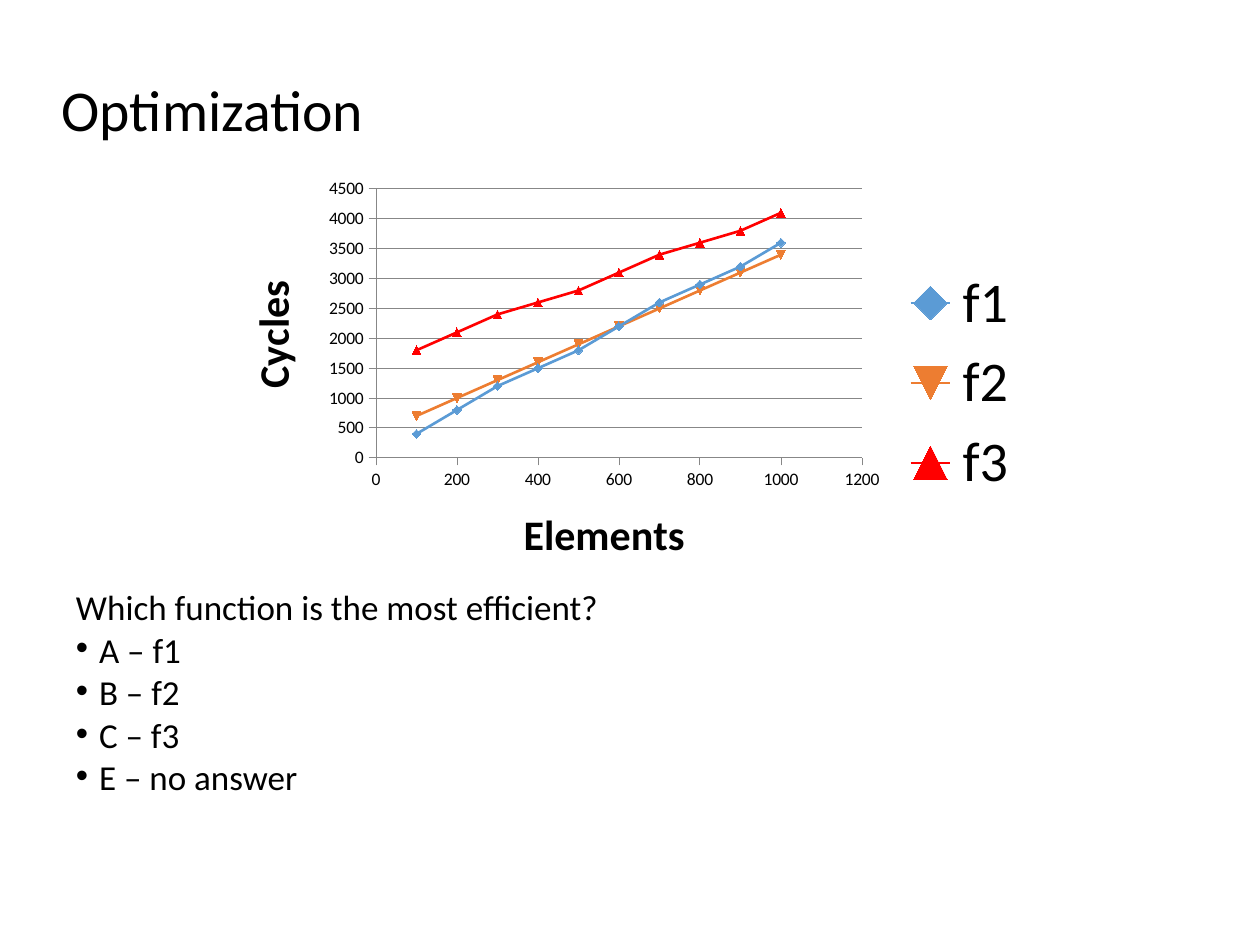
import pptx
import pptx.chart.data
import pptx.dml.color
import pptx.enum.chart
import pptx.enum.text
import pptx.oxml
import pptx.oxml.ns
import pptx.util

PX = 9144000 // 1260  # EMU per px, 126 px to the inch
THEME = {
    "font": "Calibri", "bullet_font": "Arial", "text": "000000", "grid": "878787",
    "title": 33, "body": 20, "ticks": 10, "axis_title": 24, "legend": 32,
    "line": 1.5, "grid_line": 0.5, "marker": 5,
}
TITLE = "Optimization"
QUESTION = "Which function is the most efficient?"
ANSWERS = ["A – f1", "B – f2", "C – f3", "E – no answer"]
ELEMENTS = range(100, 1001, 100)
# name, colour, cycles
FUNCTIONS = [
    ("f1", "5B9BD5", [400, 800, 1200, 1500, 1800, 2200, 2600, 2900, 3200, 3600]),
    ("f2", "ED7D31", [700, 1000, 1300, 1600, 1900, 2200, 2500, 2800, 3100, 3400]),
    ("f3", "FF0000", [1800, 2100, 2400, 2600, 2800, 3100, 3400, 3600, 3800, 4100]),
]
# left, top, width, height in px
TITLE_BOX = (49, 60, 1046, 105)
QUESTION_BOX = (76, 597, 1108, 240)
CHART_BOX = (214, 170, 827, 425)
PLOT_BOX = (376, 189, 486, 269)
LEGEND_BOX = (912, 258, 110, 250)
X_TITLE_BOX = (516, 499, 160, 51)
Y_TITLE_BOX = (237, 273, 51, 108)


def rgb(code):
    return pptx.dml.color.RGBColor.from_string(code)


def set_font(font, size, bold=False):
    font.name = THEME["font"]
    font.size = pptx.util.Pt(size)
    font.bold = bold
    font.color.rgb = rgb(THEME["text"])


def set_grid_line(line):
    line.color.rgb = rgb(THEME["grid"])
    line.width = pptx.util.Pt(THEME["grid_line"])


def to_emu(box):
    return [length * PX for length in box]


def chart_layout(box, inner=False, sized=True):
    """Return a manual layout placing a slide px box inside the chart."""
    left, top, width, height = box
    chart_left, chart_top, chart_width, chart_height = CHART_BOX
    parts = [("layoutTarget", "inner")] if inner else []
    parts += [("xMode", "edge"), ("yMode", "edge"),
              ("x", round((left - chart_left) / chart_width, 4)),
              ("y", round((top - chart_top) / chart_height, 4))]
    if sized:
        parts += [("w", round(width / chart_width, 4)),
                  ("h", round(height / chart_height, 4))]
    body = "".join(f'<c:{tag} val="{value}"/>' for tag, value in parts)
    return pptx.oxml.parse_xml(
        f'<c:layout {pptx.oxml.ns.nsdecls("c")}><c:manualLayout>{body}'
        '</c:manualLayout></c:layout>')


def place(element, layout, after):
    """Put the layout in element, behind the child named after (or first)."""
    for old in element.findall(pptx.oxml.ns.qn("c:layout")):
        element.remove(old)
    anchor = element.find(pptx.oxml.ns.qn(after)) if after else None
    if anchor is None:
        element.insert(0, layout)
    else:
        anchor.addnext(layout)


def add_title(page):
    box = page.shapes.title
    box.left, box.top, box.width, box.height = to_emu(TITLE_BOX)
    frame = box.text_frame
    frame.text = TITLE
    frame.vertical_anchor = pptx.enum.text.MSO_ANCHOR.MIDDLE
    para = frame.paragraphs[0]
    para.alignment = pptx.enum.text.PP_ALIGN.LEFT
    para.line_spacing = 0.9
    set_font(para.font, THEME["title"])


def add_bullet(para):
    props = para._p.get_or_add_pPr()
    props.set("marL", str(23 * PX))
    props.set("indent", str(-23 * PX))
    following = props.find(pptx.oxml.ns.qn("a:defRPr"))
    for tag in (f'buFont {{}} typeface="{THEME["bullet_font"]}"', 'buChar {} char="•"'):
        markup = tag.format(pptx.oxml.ns.nsdecls("a"))
        following.addprevious(pptx.oxml.parse_xml(f"<a:{markup}/>"))


def add_question(page):
    frame = page.shapes.add_textbox(*to_emu(QUESTION_BOX)).text_frame
    frame.word_wrap = True
    frame.margin_left = frame.margin_top = frame.margin_right = frame.margin_bottom = 0
    frame.text = "\n".join([QUESTION] + ANSWERS)
    for index, para in enumerate(frame.paragraphs):
        para.line_spacing = 0.7
        para.space_before = pptx.util.Pt(7.5 if index else 0)
        set_font(para.font, THEME["body"])
        if index:
            add_bullet(para)


def style_axis(axis, title, box, top, step):
    axis.minimum_scale, axis.maximum_scale, axis.major_unit = 0, top, step
    axis.major_tick_mark = pptx.enum.chart.XL_TICK_MARK.OUTSIDE
    axis.minor_tick_mark = pptx.enum.chart.XL_TICK_MARK.NONE
    set_grid_line(axis.format.line)
    set_font(axis.tick_labels.font, THEME["ticks"])
    frame = axis.axis_title.text_frame
    frame.text = title
    set_font(frame.paragraphs[0].runs[0].font, THEME["axis_title"], bold=True)
    place(axis.axis_title._element, chart_layout(box, sized=False), "c:tx")


def add_chart(page):
    data = pptx.chart.data.XyChartData()
    for name, _, cycles in FUNCTIONS:
        points = data.add_series(name)
        for count, value in zip(ELEMENTS, cycles):
            points.add_data_point(count, value)
    chart = page.shapes.add_chart(
        pptx.enum.chart.XL_CHART_TYPE.XY_SCATTER_LINES, *to_emu(CHART_BOX), data).chart
    chart.has_title = False
    set_font(chart.font, THEME["ticks"])
    chart.plots[0].vary_by_categories = False
    place(chart._chartSpace.chart.plotArea, chart_layout(PLOT_BOX, inner=True), None)

    for number, (series, (_, color, _)) in enumerate(
            zip(list(chart.plots[0].series), FUNCTIONS), start=1):
        # The automatic markers 1 to 3 are diamond, triangle down, triangle up.
        series._element.find(pptx.oxml.ns.qn("c:idx")).set("val", str(number))
        series.smooth = False
        series.format.line.width = pptx.util.Pt(THEME["line"])
        series.format.line.color.rgb = rgb(color)
        series.marker.size = THEME["marker"]
        series.marker.format.fill.solid()
        series.marker.format.fill.fore_color.rgb = rgb(color)
        series.marker.format.line.color.rgb = rgb(color)

    style_axis(chart.category_axis, "Elements", X_TITLE_BOX, 1200, 200)
    style_axis(chart.value_axis, "Cycles", Y_TITLE_BOX, 4500, 500)
    chart.category_axis.has_major_gridlines = False
    set_grid_line(chart.value_axis.major_gridlines.format.line)
    turned = chart.value_axis.axis_title.text_frame._txBody.bodyPr
    turned.set("rot", "-5400000")
    turned.set("vert", "horz")

    chart.has_legend = True
    chart.legend.position = pptx.enum.chart.XL_LEGEND_POSITION.RIGHT
    chart.legend.include_in_layout = False
    set_font(chart.legend.font, THEME["legend"])
    place(chart.legend._element, chart_layout(LEGEND_BOX), "c:legendPos")


def main():
    deck = pptx.Presentation()
    deck.slide_width, deck.slide_height = 1260 * PX, 945 * PX
    page = deck.slides.add_slide(deck.slide_layouts[5])
    add_title(page)
    add_question(page)
    add_chart(page)
    deck.save("out.pptx")


if __name__ == "__main__":
    main()
